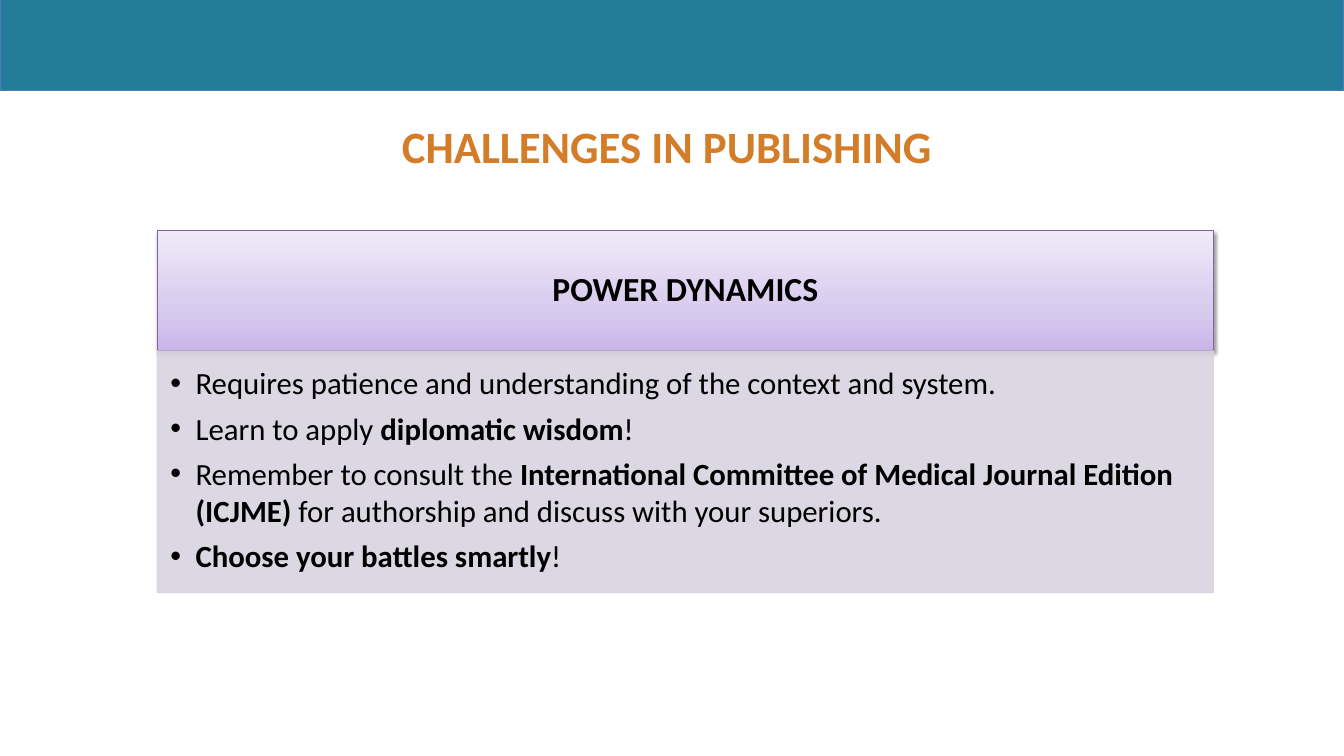
from copy import deepcopy
from dataclasses import dataclass

from lxml import etree
from pptx import Presentation
from pptx import util as u
from pptx.dml.color import RGBColor
from pptx.enum import shapes, text
from pptx.oxml import ns

COLORS = {
    "band": "237C9A", "band_line": "4B7EBC", "title": "D37D28",
    "text": "000000", "heading_line": "8064A2", "body": "D8D3E0",
    "shadow": "000000",
}
HEADING_STOPS = [(0, "C9B5E8"), (0.35, "D8CBEE"), (1, "F0EAF9")]
FONT = "Calibri"
SLIDE_WIDTH, SLIDE_HEIGHT = 960, 540
PANEL_LEFT, PANEL_WIDTH = 112.3, 754.5
HEADING_TOP, HEADING_HEIGHT, BODY_HEIGHT = 164.6, 86, 172.8
BULLET_INDENT = 18


@dataclass(frozen=True)
class Span:
    text: str
    bold: bool = False


@dataclass(frozen=True)
class Box:
    left: float
    top: float
    width: float
    height: float
    line: str
    fill: str | None = None


BAND = Box(0, 0, SLIDE_WIDTH, 64.8, "band_line", "band")
HEADING = Box(PANEL_LEFT, HEADING_TOP, PANEL_WIDTH, HEADING_HEIGHT, "heading_line")
BODY = Box(PANEL_LEFT, HEADING_TOP + HEADING_HEIGHT, PANEL_WIDTH, BODY_HEIGHT,
           "body", "body")
BULLETS = [
    [Span("Requires patience and understanding of the context and system.")],
    [Span("Learn to apply "), Span("diplomatic wisdom", True), Span("!")],
    [Span("Remember to consult the "),
     Span("International Committee of Medical Journal Edition (ICJME) ", True),
     Span("for authorship and discuss with your superiors.")],
    [Span("Choose your battles smartly", True), Span("!")],
]


def rgb(name: str) -> RGBColor:
    return RGBColor.from_string(COLORS[name])


def add_box(slide, box: Box):
    shape = slide.shapes.add_shape(
        shapes.MSO_SHAPE.RECTANGLE,
        *map(u.Pt, (box.left, box.top, box.width, box.height)))
    shape.shadow.inherit = False
    if box.fill:
        shape.fill.solid()
        shape.fill.fore_color.rgb = rgb(box.fill)
    shape.line.color.rgb = rgb(box.line)
    shape.line.width = u.Pt(0.75)
    return shape


def set_gradient(shape, stops: list[tuple[float, str]]) -> None:
    """Fill from bottom to top with any number of stops."""
    shape.fill.gradient()
    shape.fill.gradient_angle = 90
    stop_list = shape._element.spPr.find(".//" + ns.qn("a:gsLst"))
    while len(stop_list) < len(stops):
        stop_list.append(deepcopy(stop_list[0]))
    for stop, (position, color) in zip(shape.fill.gradient_stops, stops):
        stop.position = position
        stop.color.rgb = RGBColor.from_string(color)


def add_shadow(shape) -> None:
    effects = shape._element.spPr.find(ns.qn("a:effectLst"))
    shadow = etree.SubElement(
        effects, ns.qn("a:outerShdw"), blurRad=str(u.Pt(3.1)),
        dist=str(u.Pt(1.6)), dir="5400000", rotWithShape="0")
    color = etree.SubElement(shadow, ns.qn("a:srgbClr"), val=COLORS["shadow"])
    etree.SubElement(color, ns.qn("a:alpha"), val="38000")


def set_opacity(shape, percent: int) -> None:
    for color in shape._element.spPr.iter(ns.qn("a:srgbClr")):
        etree.SubElement(color, ns.qn("a:alpha"), val=str(percent * 1000))


def set_frame(shape, anchor, left: float, top: float, right: float, bottom: float):
    frame = shape.text_frame
    frame.word_wrap = True
    frame.vertical_anchor = anchor
    frame.margin_left, frame.margin_top = u.Pt(left), u.Pt(top)
    frame.margin_right, frame.margin_bottom = u.Pt(right), u.Pt(bottom)
    return frame


def format_font(font, size: float, color: str, bold: bool) -> None:
    font.name, font.size, font.bold = FONT, u.Pt(size), bold
    font.color.rgb = rgb(color)


def write_line(frame, line: str, size: float, color: str):
    frame.text = line
    paragraph = frame.paragraphs[0]
    paragraph.alignment = text.PP_ALIGN.CENTER
    format_font(paragraph.runs[0].font, size, color, True)
    return paragraph


def write_bullets(frame, bullets: list[list[Span]]) -> None:
    for index, spans in enumerate(bullets):
        paragraph = frame.add_paragraph() if index else frame.paragraphs[0]
        paragraph.alignment = text.PP_ALIGN.LEFT
        paragraph.space_after = u.Pt(6)
        properties = paragraph._p.get_or_add_pPr()
        properties.set("marL", str(u.Pt(BULLET_INDENT)))
        properties.set("indent", str(-u.Pt(BULLET_INDENT)))
        etree.SubElement(properties, ns.qn("a:buFont"), typeface="Arial")
        etree.SubElement(properties, ns.qn("a:buChar"), char="•")
        for span in spans:
            run = paragraph.add_run()
            run.text = span.text
            format_font(run.font, 22, "text", span.bold)


def main() -> None:
    presentation = Presentation()
    presentation.slide_width = u.Pt(SLIDE_WIDTH)
    presentation.slide_height = u.Pt(SLIDE_HEIGHT)
    slide = presentation.slides.add_slide(presentation.slide_layouts[6])
    middle, top = text.MSO_ANCHOR.MIDDLE, text.MSO_ANCHOR.TOP

    add_box(slide, BAND)

    title = slide.shapes.add_textbox(*map(u.Pt, (44.5, 78.5, 864, 46.8)))
    write_line(set_frame(title, middle, 7.2, 3.6, 7.2, 0),
               "CHALLENGES IN PUBLISHING", 32, "title")

    heading = add_box(slide, HEADING)
    set_gradient(heading, HEADING_STOPS)
    add_shadow(heading)
    paragraph = write_line(set_frame(heading, middle, 13.7, 7.9, 13.7, 7.9),
                           "POWER DYNAMICS", 24, "text")
    paragraph.line_spacing = 0.9

    body = add_box(slide, BODY)
    set_opacity(body, 90)
    write_bullets(set_frame(body, top, 9.4, 9.4, 12.2, 13.7), BULLETS)

    presentation.save("out.pptx")


if __name__ == "__main__":
    main()
